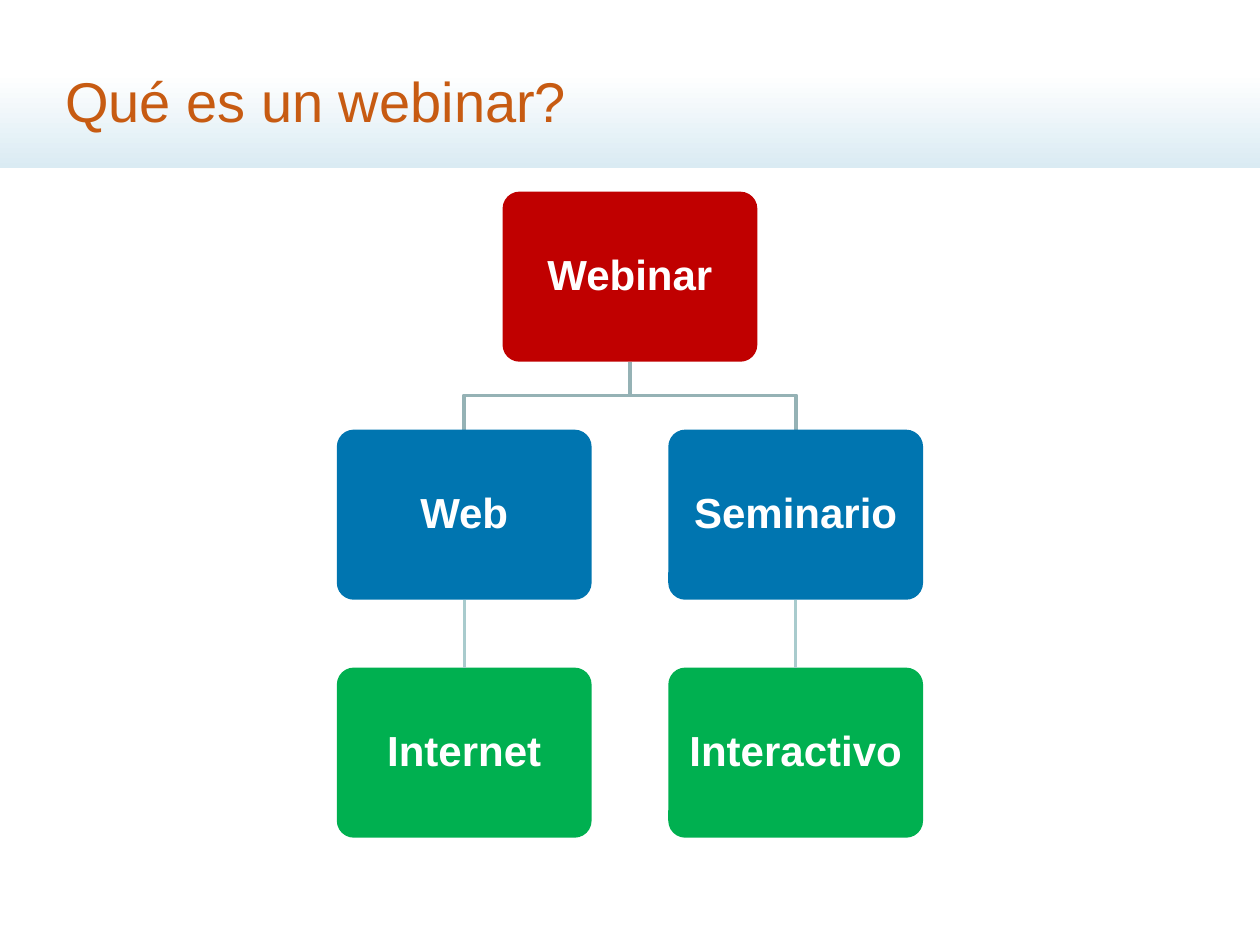
from dataclasses import dataclass

from lxml import etree
from pptx import Presentation
from pptx import util as u
from pptx.dml.color import RGBColor
from pptx.enum import shapes, text
from pptx.oxml import ns
from pptx.shapes.autoshape import Shape
from pptx.slide import Slide

WHITE = RGBColor(0xFF, 0xFF, 0xFF)
PALE_BLUE = RGBColor(0xDA, 0xEB, 0xF3)
ORANGE = RGBColor(0xC7, 0x5B, 0x12)
RED = RGBColor(0xC0, 0x00, 0x00)
BLUE = RGBColor(0x00, 0x75, 0xB0)
GREEN = RGBColor(0x00, 0xB0, 0x50)
BRANCH_GREY = RGBColor(0x95, 0xB2, 0xB5)
STEM_GREY = RGBColor(0xA9, 0xCB, 0xCD)

SLIDE_WIDTH, SLIDE_HEIGHT = 720, 540
NODE_WIDTH, NODE_HEIGHT = 145.6, 97.2
TOP_LEVEL, LEVEL_STEP = 109.5, 136
CENTER, COLUMN_OFFSET = SLIDE_WIDTH / 2, 94.7
LINE_WIDTH = 2

TITLE_FONT = {"name": "Arial", "size": u.Pt(32), "bold": False}
NODE_FONT = {"name": "Arial", "size": u.Pt(24), "bold": True}
TITLE_FRAME = {
    "word_wrap": True,
    "auto_size": text.MSO_AUTO_SIZE.NONE,
    "vertical_anchor": text.MSO_ANCHOR.MIDDLE,
    "margin_left": u.Pt(7.2),
    "margin_right": u.Pt(7.2),
    "margin_top": u.Pt(3.6),
    "margin_bottom": u.Pt(3.6),
}
NODE_FRAME = TITLE_FRAME | {"margin_top": u.Pt(7.2), "margin_bottom": u.Pt(7.2)}
NODE_PARAGRAPH = {
    "alignment": text.PP_ALIGN.CENTER,
    "line_spacing": 0.9,
    "space_after": u.Pt(8.4),
}


@dataclass(frozen=True)
class Node:
    label: str
    center: float
    level: int
    color: RGBColor

    @property
    def top(self) -> float:
        return TOP_LEVEL + self.level * LEVEL_STEP

    @property
    def bottom(self) -> float:
        return self.top + NODE_HEIGHT


def apply_format(target: object, values: dict) -> None:
    for name, value in values.items():
        setattr(target, name, value)


def draw_title(slide: Slide, wording: str) -> None:
    title = slide.shapes.title
    apply_format(title, {"left": u.Pt(30), "top": u.Pt(18),
                         "width": u.Pt(660), "height": u.Pt(78)})
    apply_format(title.text_frame, TITLE_FRAME)
    title.text_frame.text = wording
    paragraph = title.text_frame.paragraphs[0]
    paragraph.alignment = text.PP_ALIGN.LEFT
    apply_format(paragraph.font, TITLE_FONT)
    paragraph.font.color.rgb = ORANGE


def draw_band(slide: Slide) -> None:
    band = slide.shapes.add_shape(shapes.MSO_SHAPE.RECTANGLE, 0, u.Pt(42),
                                  u.Pt(SLIDE_WIDTH), u.Pt(54))
    band.shadow.inherit = False
    band.line.fill.background()
    band.fill.gradient()
    band.fill.gradient_angle = 270
    for stop, color in zip(band.fill.gradient_stops, (WHITE, PALE_BLUE)):
        stop.color.rgb = color
    slide.shapes.title.element.addprevious(band.element)


def draw_node(slide: Slide, node: Node) -> Shape:
    box = slide.shapes.add_shape(
        shapes.MSO_SHAPE.ROUNDED_RECTANGLE,
        u.Pt(node.center - NODE_WIDTH / 2), u.Pt(node.top),
        u.Pt(NODE_WIDTH), u.Pt(NODE_HEIGHT))
    box.adjustments[0] = 0.1
    box.shadow.inherit = False
    box.fill.solid()
    box.fill.fore_color.rgb = node.color
    box.line.fill.background()
    apply_format(box.text_frame, NODE_FRAME)
    box.text_frame.text = node.label
    paragraph = box.text_frame.paragraphs[0]
    apply_format(paragraph, NODE_PARAGRAPH)
    apply_format(paragraph.font, NODE_FONT)
    paragraph.font.color.rgb = WHITE
    return box


def draw_branch(slide: Slide, parent: Node, child: Node) -> None:
    middle = (parent.bottom + child.top) / 2
    route = [(parent.center, middle), (child.center, middle),
             (child.center, child.top)]
    builder = slide.shapes.build_freeform(parent.center, parent.bottom,
                                          scale=u.Pt(1))
    builder.add_line_segments(route, close=False)
    branch = builder.convert_to_shape()
    branch.shadow.inherit = False
    branch.fill.background()
    branch.line.color.rgb = BRANCH_GREY
    branch.line.width = u.Pt(LINE_WIDTH)


def draw_stem(slide: Slide, upper: Shape, lower: Shape) -> None:
    stem = slide.shapes.add_connector(shapes.MSO_CONNECTOR.STRAIGHT, 0, 0, 0, 0)
    stem.begin_connect(upper, 2)
    stem.end_connect(lower, 0)
    stem.line.color.rgb = STEM_GREY
    stem.line.width = u.Pt(LINE_WIDTH)
    etree.SubElement(stem.element.spPr, ns.qn("a:effectLst"))


def main() -> None:
    presentation = Presentation()
    presentation.slide_width = u.Pt(SLIDE_WIDTH)
    presentation.slide_height = u.Pt(SLIDE_HEIGHT)
    slide = presentation.slides.add_slide(presentation.slide_layouts[5])
    draw_title(slide, "Qué es un webinar?")
    draw_band(slide)

    webinar = Node("Webinar", CENTER, 0, RED)
    columns = (("Web", "Internet", CENTER - COLUMN_OFFSET),
               ("Seminario", "Interactivo", CENTER + COLUMN_OFFSET))
    draw_node(slide, webinar)
    for origin, meaning, center in columns:
        part = Node(origin, center, 1, BLUE)
        draw_branch(slide, webinar, part)
        part_box = draw_node(slide, part)
        meaning_box = draw_node(slide, Node(meaning, center, 2, GREEN))
        draw_stem(slide, part_box, meaning_box)

    presentation.save("out.pptx")


if __name__ == "__main__":
    main()
